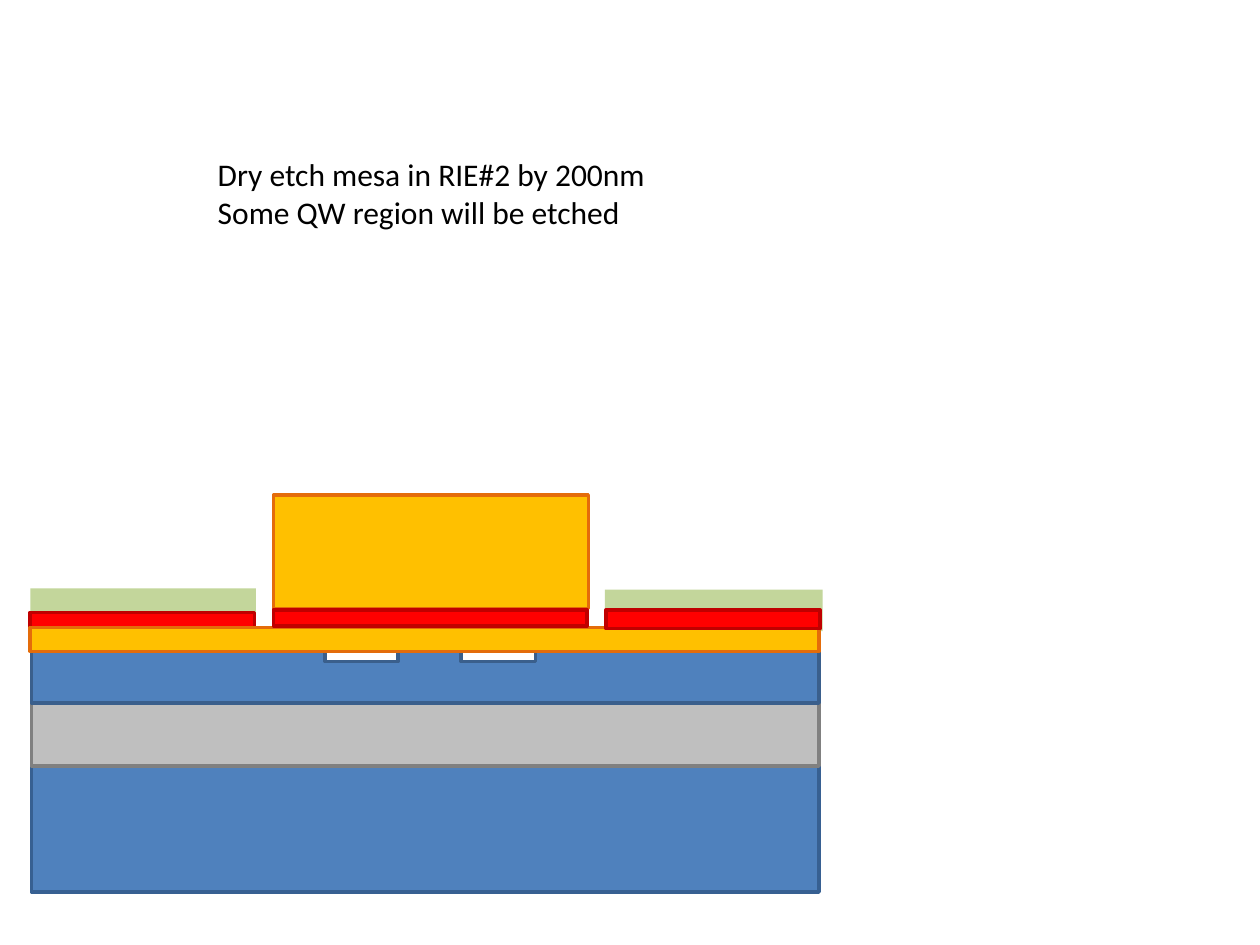
from dataclasses import dataclass

from pptx import Presentation
from pptx.dml.color import RGBColor
from pptx.enum.shapes import MSO_SHAPE
from pptx.enum.text import MSO_AUTO_SIZE
from pptx.util import Inches, Pt


@dataclass(frozen=True)
class Theme:
    font: str = "Calibri"
    text_size: int = 18
    line_width: int = 2
    text_color: str = "000000"
    # Each material: fill colour, outline colour
    resist: tuple = ("C3D69B", None)
    quantum_well: tuple = ("FF0000", "C00000")
    cladding: tuple = ("FFC000", "E46C0A")
    substrate: tuple = ("4F81BD", "376092")
    waveguide: tuple = ("4F81BD", "3A5F8C")
    oxide: tuple = ("BFBFBF", "808080")


THEME = Theme()


def paint(shape, material):
    """Apply a material's fill and outline."""
    fill, line = material
    shape.shadow.inherit = False
    shape.fill.solid()
    shape.fill.fore_color.rgb = RGBColor.from_string(fill)
    if line is None:
        shape.line.fill.background()
    else:
        shape.line.color.rgb = RGBColor.from_string(line)
        shape.line.width = Pt(THEME.line_width)


def add_layer(shapes, box, place, material):
    """Add one rectangular layer, placed relative to the box."""
    left, top, width, height = place
    shape = shapes.add_shape(
        MSO_SHAPE.RECTANGLE, Inches(box[0] + left), Inches(box[1] + top),
        Inches(width), Inches(height))
    paint(shape, material)


def add_waveguide(shapes, box, place, trenches, depth):
    """Add a layer with shallow trenches cut into its top edge."""
    left, top = box[0] + place[0], box[1] + place[1]
    right, bottom = left + place[2], top + place[3]
    points = [(left, top)]
    for start, end in trenches:
        start, end = left + start, left + end
        points += [(start, top), (start, top + depth),
                   (end, top + depth), (end, top)]
    points += [(right, top), (right, bottom), (left, bottom)]
    points = [(Inches(x), Inches(y)) for x, y in points]
    builder = shapes.build_freeform(*points[0])
    builder.add_line_segments(points[1:], close=True)
    paint(builder.convert_to_shape(), THEME.waveguide)


def add_cross_section(slide, box):
    """Draw the layer stack of the etched mesa, from back to front."""
    shapes = slide.shapes.add_group_shape().shapes
    lower_layers = [
        ((4.56, 0.75, 1.73, 0.33), THEME.resist),
        ((0, 0.74, 1.79, 0.33), THEME.resist),
        ((0, 0.93, 1.78, 0.14), THEME.quantum_well),
        ((1.93, 0, 2.5, 0.9), THEME.cladding),
        ((0.01, 2.15, 6.25, 1), THEME.substrate),
        ((0.01, 1.65, 6.25, 0.5), THEME.oxide),
    ]
    upper_layers = [
        ((0, 1.05, 6.26, 0.19), THEME.cladding),
        ((4.57, 0.91, 1.7, 0.15), THEME.quantum_well),
        ((1.93, 0.91, 2.49, 0.13), THEME.quantum_well),
    ]
    for place, material in lower_layers:
        add_layer(shapes, box, place, material)
    add_waveguide(shapes, box, (0.01, 1.24, 6.25, 0.41),
                  trenches=[(2.33, 2.91), (3.41, 4)], depth=0.08)
    for place, material in upper_layers:
        add_layer(shapes, box, place, material)


def add_step_note(slide, box, lines):
    """Write the process step, one paragraph per line."""
    frame = slide.shapes.add_textbox(*map(Inches, box)).text_frame
    frame.word_wrap = False
    frame.auto_size = MSO_AUTO_SIZE.SHAPE_TO_FIT_TEXT
    frame.text = "\n".join(lines)
    font_format = {"name": THEME.font, "size": Pt(THEME.text_size)}
    for paragraph in frame.paragraphs:
        font = paragraph.runs[0].font
        for name, value in font_format.items():
            setattr(font, name, value)
        font.color.rgb = RGBColor.from_string(THEME.text_color)


def main():
    presentation = Presentation()
    presentation.slide_width = Inches(10)
    presentation.slide_height = Inches(7.5)
    slide = presentation.slides.add_slide(presentation.slide_layouts[6])
    add_cross_section(slide, (0.24, 3.93))
    add_step_note(slide, (1.63, 1.18, 3.63, 0.71), [
        "Dry etch mesa in RIE#2 by 200nm",
        "Some QW region will be etched",
    ])
    presentation.save("out.pptx")


if __name__ == "__main__":
    main()
